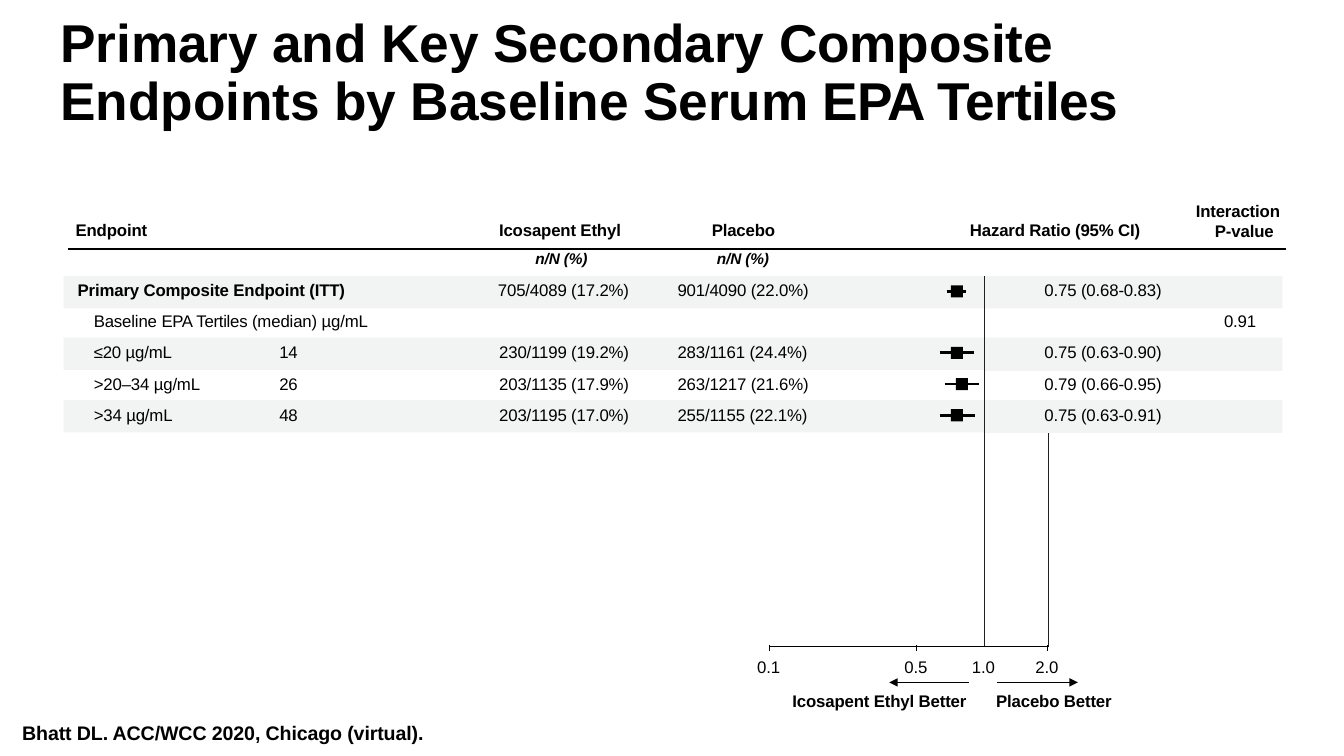
from dataclasses import dataclass
from math import log
from typing import Optional, Union

from lxml import etree
from pptx import Presentation
from pptx import util as u
from pptx.dml.color import RGBColor
from pptx.enum import shapes, text
from pptx.oxml import ns

EMU_PER_PX = 9144  # 100 px to the inch
BLACK, BAND, GRID = "000000", "F2F3F3", "231F20"
NO_GRID_STYLE = "{2D5ABB26-0587-4C30-8999-92F81FD0307C}"

TABLE_LEFT, TABLE_TOP = 63, 274
COLUMN_WIDTHS = [176, 180, 229, 115, 213, 64, 232]
ROW_HEIGHTS = [32, 30, 32, 30, 32, 211]
ROW_PITCH = 30.75
UNITY_X, PX_PER_LOG = 976, 95
AXIS_Y = 640


@dataclass
class Run:
    text: str
    spacing: int = -10  # hundredths of a point


Content = Union[str, list[Run]]


@dataclass
class Label:
    text: Content
    left: int
    top: int
    width: int
    height: int
    size: int = 12
    bold: bool = True
    italic: bool = False
    line: Optional[float] = None
    inset: int = 1
    indent: int = 1
    hanging: int = 0


@dataclass
class Cell:
    column: int
    text: Content
    span: int = 1
    indent: int = 0
    right: Optional[int] = None  # right margin of right-aligned text
    bold: bool = False


@dataclass
class Ratio:
    row: int
    value: float
    low: float
    high: float


def px(length: float) -> int:
    return round(length) * EMU_PER_PX


def colour(value: str) -> RGBColor:
    return RGBColor.from_string(value)


def write(frame, content: Content, *, size=12, bold=False, italic=False, line=None,
          indent=0, hanging=0, align=text.PP_ALIGN.LEFT) -> None:
    paragraph = frame.paragraphs[0]
    paragraph.alignment = align
    if line:
        paragraph.line_spacing = u.Pt(line)
    properties = paragraph._p.get_or_add_pPr()
    properties.set("marL", str(px(indent)))
    properties.set("indent", str(-px(hanging)))
    for part in [Run(content)] if isinstance(content, str) else content:
        run = paragraph.add_run()
        run.text = part.text
        run.font.name, run.font.size = "Arial", u.Pt(size)
        run.font.bold, run.font.italic = bold, italic
        run.font.color.rgb = colour(BLACK)
        run._r.get_or_add_rPr().set("spc", str(part.spacing))


def add_label(slide, label: Label) -> None:
    box = slide.shapes.add_textbox(px(label.left), px(label.top), px(label.width), px(label.height))
    frame = box.text_frame
    frame.word_wrap = True
    frame.margin_left = frame.margin_right = frame.margin_bottom = 0
    frame.margin_top = px(label.inset)
    write(frame, label.text, size=label.size, bold=label.bold, italic=label.italic,
          line=label.line, indent=label.indent, hanging=label.hanging)


def add_block(slide, left: float, top: float, width: int, height: int, fill: str) -> None:
    shape = slide.shapes.add_shape(shapes.MSO_SHAPE.RECTANGLE, px(left), px(top), px(width), px(height))
    shape.shadow.inherit = False
    shape.fill.solid()
    shape.fill.fore_color.rgb = colour(fill)
    shape.line.fill.background()


def add_line(slide, x1: float, y1: float, x2: float, y2: float, width: float, arrow=False) -> None:
    line = slide.shapes.add_connector(shapes.MSO_CONNECTOR.STRAIGHT, px(x1), px(y1), px(x2), px(y2))
    line.line.color.rgb = colour(BLACK)
    line.line.width = u.Pt(width)
    if arrow:
        etree.SubElement(line.line._get_or_add_ln(), ns.qn("a:tailEnd"), type="triangle")
    etree.SubElement(line._element.spPr, ns.qn("a:effectLst"))


def add_border(cell, side: str, value: str) -> None:
    border = etree.SubElement(cell._tc.get_or_add_tcPr(), ns.qn(f"a:ln{side}"), w=str(u.Pt(0.75)))
    fill = etree.SubElement(border, ns.qn("a:solidFill"))
    etree.SubElement(fill, ns.qn("a:srgbClr"), val=value)


def row_middle(row: int) -> int:
    return round(289 + ROW_PITCH * row)


def ratio_x(ratio: float) -> int:
    return round(UNITY_X + PX_PER_LOG * log(ratio))


def tertile(name: str, median: str, treated: str, placebo: str, ratio: str) -> list[Cell]:
    return [Cell(0, name, indent=30), Cell(1, median, indent=38), Cell(2, treated, right=24),
            Cell(3, placebo, 2, indent=24), Cell(5, ratio, 2, indent=60)]


TITLE = [Run("Primary and Key Secondary Composite Endpoints by Baseline Serum "),
         Run("EPA ", -90), Run("Tertiles", -50)]
LABELS = [
    Label(TITLE, 59, 7, 1114, 180, size=38, line=41, inset=9),
    Label("Endpoint", 74, 217, 75, 23),
    Label("Icosapent Ethyl", 494, 217, 126, 23),
    Label("Placebo", 705, 217, 67, 23),
    Label("Hazard Ratio (95% CI)", 961, 217, 175, 23),
    Label("Interaction P-value", 1184, 197, 88, 42, line=13.9, inset=3, indent=21, hanging=19),
    Label("n/N (%)", 530, 246, 55, 21, size=11, italic=True),
    Label("n/N (%)", 710, 246, 55, 21, size=11, italic=True),
    Label("Icosapent Ethyl Better", 785, 686, 179, 21, line=14.2, inset=0),
    Label("Placebo Better", 987, 686, 119, 21, line=14.2, inset=0),
    Label("Bhatt DL. ACC/WCC 2020, Chicago (virtual).", 21, 716, 405, 25, size=14, line=16.4, inset=0),
]
ROWS = [
    [Cell(0, "Primary Composite Endpoint (ITT)", 2, indent=14, bold=True),
     Cell(2, "705/4089 (17.2%)", right=24), Cell(3, "901/4090 (22.0%)", 2, indent=24),
     Cell(5, "0.75 (0.68-0.83)", 2, indent=60)],
    [Cell(0, [Run("Baseline "), Run("EPA ", -30), Run("Tertiles ", -20), Run("(median) µg/mL")], 5, indent=30),
     Cell(5, "0.91", 2, right=26)],
    tertile("≤20 µg/mL", "14", "230/1199 (19.2%)", "283/1161 (24.4%)", "0.75 (0.63-0.90)"),
    tertile(">20–34 µg/mL", "26", "203/1135 (17.9%)", "263/1217 (21.6%)", "0.79 (0.66-0.95)"),
    tertile(">34 µg/mL", "48", "203/1195 (17.0%)", "255/1155 (22.1%)", "0.75 (0.63-0.91)"),
    [Cell(0, "", 4), Cell(4, ""), Cell(5, "")],
]
RATIOS = [Ratio(0, 0.75, 0.68, 0.83), Ratio(2, 0.75, 0.63, 0.90),
          Ratio(3, 0.79, 0.66, 0.95), Ratio(4, 0.75, 0.63, 0.91)]
TICKS = {"0.1": 763, "0.5": 909, "1.0": UNITY_X, "2.0": 1039}


def add_results(slide) -> None:
    frame = slide.shapes.add_table(len(ROW_HEIGHTS), len(COLUMN_WIDTHS), px(TABLE_LEFT), px(TABLE_TOP),
                                   px(sum(COLUMN_WIDTHS)), px(sum(ROW_HEIGHTS)))
    table = frame.table
    table.first_row = table.horz_banding = False
    table._tbl.tblPr.find(ns.qn("a:tableStyleId")).text = NO_GRID_STYLE
    for column, width in zip(table.columns, COLUMN_WIDTHS):
        column.width = px(width)
    for index, (row, height) in enumerate(zip(table.rows, ROW_HEIGHTS)):
        row.height = px(height)
        for item in ROWS[index]:
            cell = table.cell(index, item.column)
            if item.span > 1:
                cell.merge(table.cell(index, item.column + item.span - 1))
            cell.margin_left = cell.margin_bottom = 0
            cell.margin_right = px(item.right or 0)
            cell.margin_top = px(4 if index % 2 else 5)
            if item.column == 5:
                add_border(cell, "L", GRID)
            elif item.column + item.span == 5:
                add_border(cell, "R", GRID)
            if index == 5 and item.column >= 4:
                add_border(cell, "B", BLACK)
            if item.column == 5 and index in (0, 2, 4):
                cell.fill.solid()
                cell.fill.fore_color.rgb = colour(BAND)
            else:
                cell.fill.background()
            if item.text:
                align = text.PP_ALIGN.LEFT if item.right is None else text.PP_ALIGN.RIGHT
                write(cell.text_frame, item.text, bold=item.bold, indent=item.indent, align=align)


def main() -> None:
    presentation = Presentation()
    presentation.slide_width, presentation.slide_height = px(1333), px(750)
    slide = presentation.slides.add_slide(presentation.slide_layouts[6])

    # Title, column headings and captions
    for label in LABELS:
        add_label(slide, label)
    add_line(slide, 67, 247, 1275, 247, 1.25)

    # Row bands
    for row in (0, 2, 4):
        add_block(slide, TABLE_LEFT, row_middle(row) - 15, sum(COLUMN_WIDTHS), 32, BAND)

    # Hazard ratios with confidence intervals
    for ratio in RATIOS:
        y = row_middle(ratio.row)
        add_block(slide, ratio_x(ratio.value) - 6, y - 6, 12, 12, BLACK)
        add_line(slide, ratio_x(ratio.low), y, ratio_x(ratio.high), y, 2)

    # Results table, which also carries the axis lines
    add_results(slide)

    # Axis ticks, their values and the direction arrows
    for value, x in TICKS.items():
        if x != UNITY_X:
            add_line(slide, x, AXIS_Y, x, AXIS_Y + 6, 0.5)
        add_label(slide, Label(value, x - 13, 652, 26, 21, bold=False, line=14.2, inset=0))
    add_line(slide, 961, 677, 882, 677, 0.75, arrow=True)
    add_line(slide, 989, 677, 1069, 677, 0.75, arrow=True)

    presentation.save("out.pptx")


if __name__ == "__main__":
    main()
